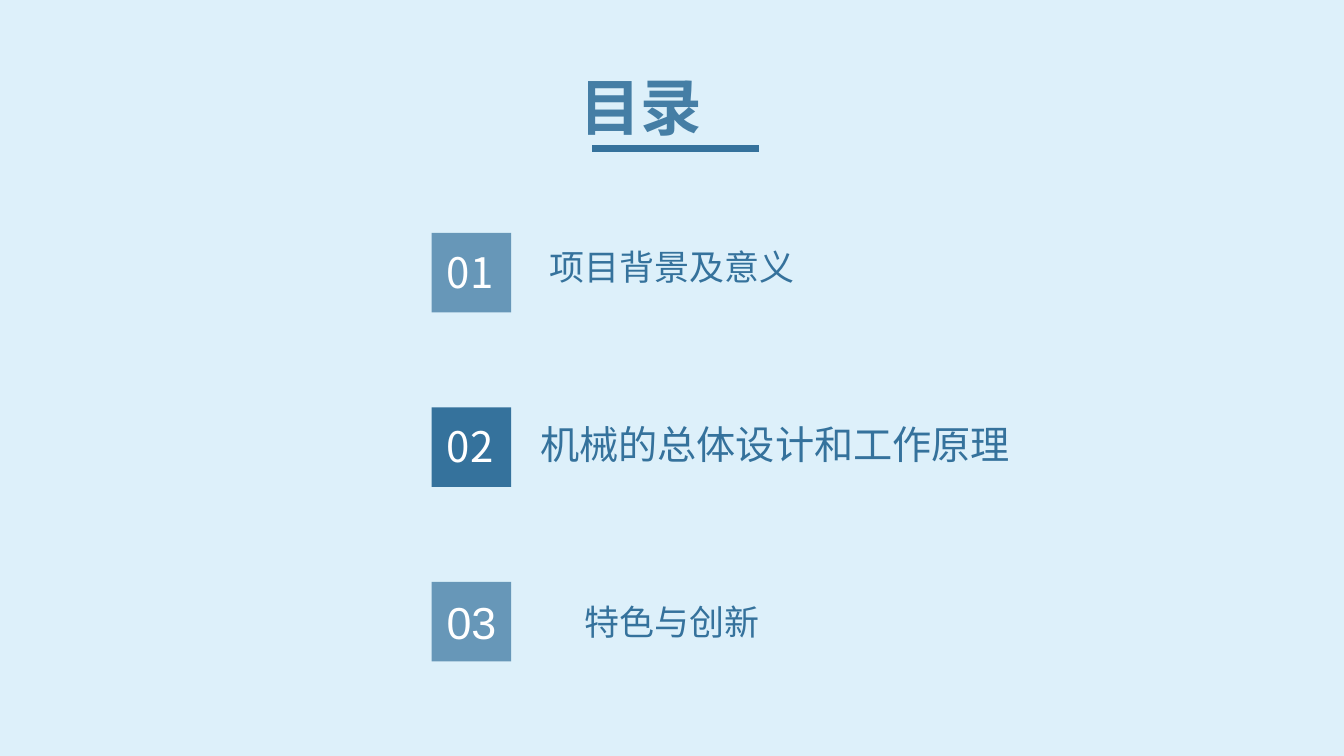
"""Builds the contents slide with its title and three numbered sections."""
from lxml import etree
from pptx import Presentation
from pptx.dml.color import RGBColor
from pptx.enum import shapes, text
from pptx.oxml import ns
from pptx.util import Pt

CJK = "Noto Sans CJK SC"
BLUE, WHITE, SKY = "35729C", "FFFFFF", "DDF0FA"


def paint(color, value, alpha=100):
    color.rgb = RGBColor.from_string(value)
    if alpha < 100:
        tint = color._xFill.find(ns.qn("a:srgbClr"))
        etree.SubElement(tint, ns.qn("a:alpha")).set("val", str(alpha * 1000))


class ContentsSlide:
    def __init__(self, deck):
        self.slide = deck.slides.add_slide(deck.slide_layouts[6])
        backdrop = self.slide.background.fill
        backdrop.solid()
        paint(backdrop.fore_color, SKY)

    def group(self):
        return self.slide.shapes.add_group_shape().shapes

    def letter(self, frame, wording, size, color=BLUE, font="Arial",
               align=text.PP_ALIGN.CENTER, bold=False, alpha=100):
        frame.word_wrap = True
        frame.text = wording
        paragraph = frame.paragraphs[0]
        paragraph.alignment = align
        run = paragraph.runs[0]
        run.font.size = Pt(size)
        run.font.name = font
        run.font.bold = bold
        run.font.fill.solid()
        paint(run.font.fill.fore_color, color, alpha)
        latin = run.font._element.find(ns.qn("a:latin"))
        east_asian = etree.Element(ns.qn("a:ea"))
        east_asian.set("typeface", CJK)
        latin.addnext(east_asian)

    def label(self, parent, box, wording, size, **style):
        frame = parent.add_textbox(*map(Pt, box)).text_frame
        self.letter(frame, wording, size, **style)
        frame.auto_size = text.MSO_AUTO_SIZE.SHAPE_TO_FIT_TEXT

    def square(self, parent, left, top, side, alpha):
        tile = parent.add_shape(shapes.MSO_SHAPE.RECTANGLE,
                                *map(Pt, (left, top, side, side)))
        tile.shadow.inherit = False
        tile.line.fill.background()
        tile.fill.solid()
        paint(tile.fill.fore_color, BLUE, alpha)
        return tile

    def rule(self, parent, left, right, y, width):
        underline = parent.add_connector(shapes.MSO_CONNECTOR.STRAIGHT,
                                         *map(Pt, (left, y, right, y)))
        underline.line.width = Pt(width)
        underline.line.fill.solid()
        paint(underline.line.color, BLUE)
        etree.SubElement(underline._element.spPr, ns.qn("a:effectLst"))


def main():
    deck = Presentation()
    deck.slide_width, deck.slide_height = Pt(960), Pt(540)
    page = ContentsSlide(deck)

    heading = page.group()
    page.label(heading, (406.8, 45.4, 136, 60.5), "目录", 44, font=CJK,
               align=text.PP_ALIGN.JUSTIFY, bold=True, alpha=90)
    page.rule(heading, 423, 542.2, 105.8, 5)

    first_top, pitch, left, side = 166.3, 124.7, 308.4, 56.8
    sections = [
        ("项目背景及意义", 25, (370.8, 172.1, 218.2, 37.4), 70),
        ("机械的总体设计和工作原理", 28, (375.1, 296.6, 357.1, 41), 100),
        ("特色与创新", 25, (370.8, 425.5, 218.2, 37.4), 70),
    ]
    for index, (section, size, box, alpha) in enumerate(sections):
        top = first_top + index * pitch
        number = f"{index + 1:02d}"
        if index < 2:
            marker = page.group()
            page.square(marker, left, top, side, alpha)
            page.label(marker, (left, top + 6, 54.7, 43.2), number, 30,
                       color=WHITE, font=CJK)
        else:
            tile = page.square(page.slide.shapes, left, top, side, alpha)
            page.letter(tile.text_frame, number, 32, color=WHITE)
            tile.text_frame.vertical_anchor = text.MSO_ANCHOR.MIDDLE
        page.label(page.slide.shapes, box, section, size)

    deck.save("out.pptx")


if __name__ == "__main__":
    main()
